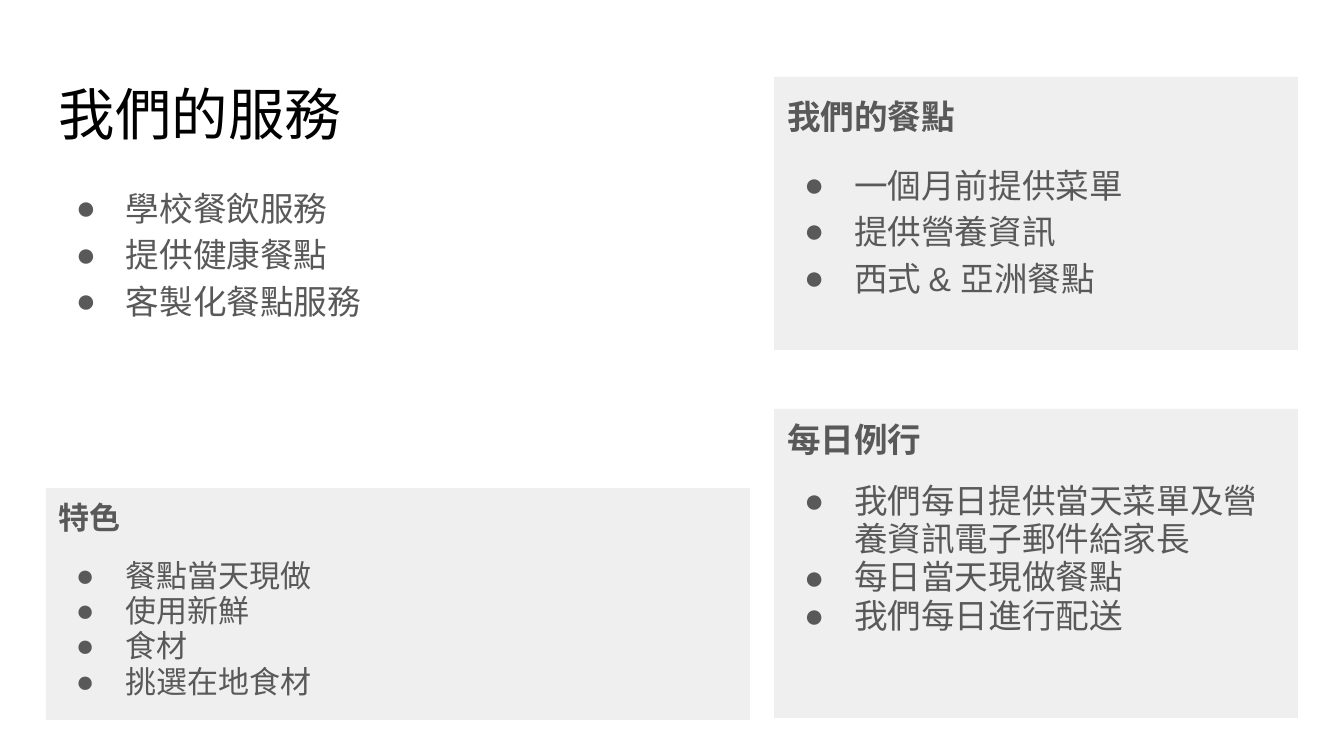
from lxml import etree
from pptx import Presentation
from pptx.dml.color import RGBColor
from pptx.enum.shapes import MSO_SHAPE
from pptx.enum.text import MSO_ANCHOR, PP_ALIGN
from pptx.oxml.ns import qn
from pptx.util import Emu, Pt

RECTANGLE = MSO_SHAPE.RECTANGLE
TOP = MSO_ANCHOR.TOP
LEFT = PP_ALIGN.LEFT
FONT = "Arial"
GREY = "595959"
PANEL = "EFEFEF"


def px(count):
    return Emu(round(count * 914400 / 134.4))


def color(value):
    return RGBColor.from_string(value)


deck = Presentation()
deck.slide_width = px(1344)
deck.slide_height = px(756)
page = deck.slides.add_slide(deck.slide_layouts[6])

blocks = [
    ((46, 66, 1252, 84), None, 30.2, 1.0, "000000", "我們的服務", False, []),
    ((46, 169, 704, 273), None, 18, 1.15, GREY, None, False,
     ["學校餐飲服務", "提供健康餐點", "客製化餐點服務"]),
    ((774, 77, 524, 273), PANEL, 18, 1.15, GREY, "我們的餐點", True,
     ["一個月前提供菜單", "提供營養資訊", "西式 & 亞洲餐點"]),
    ((46, 488, 704, 232), PANEL, 16.6, 0.95, GREY, "特色", True,
     ["餐點當天現做", "使用新鮮", "食材", "挑選在地食材"]),
    ((774, 409, 524, 309), PANEL, 18, 0.95, GREY, "每日例行", True,
     ["我們每日提供當天菜單及營養資訊電子郵件給家長", "每日當天現做餐點", "我們每日進行配送"]),
]

for place, fill, size, spacing, ink, heading, bold, items in blocks:
    bounds = [px(length) for length in place]
    if fill:
        box = page.shapes.add_shape(RECTANGLE, *bounds)
        box.shadow.inherit = False
        box.fill.solid()
        box.fill.fore_color.rgb = color(fill)
        box.line.fill.background()
    else:
        box = page.shapes.add_textbox(*bounds)
    frame = box.text_frame
    frame.word_wrap = True
    frame.vertical_anchor = TOP
    frame.margin_left = frame.margin_right = px(13)
    frame.margin_top = frame.margin_bottom = px(13)

    lines = [(heading, False)] if heading else []
    lines += [(item, True) for item in items]
    for index, (text, bulleted) in enumerate(lines):
        para = frame.add_paragraph() if index else frame.paragraphs[0]
        para.alignment = LEFT
        para.line_spacing = spacing
        para.space_before = Pt(12 if heading and index == 1 else 0)
        if bulleted:
            props = para._p.get_or_add_pPr()
            props.set("marL", str(px(67)))
            props.set("indent", str(-px(50)))
            tint = etree.SubElement(props, qn("a:buClr"))
            etree.SubElement(tint, qn("a:srgbClr"), val=GREY)
            etree.SubElement(props, qn("a:buFont"), typeface=FONT)
            etree.SubElement(props, qn("a:buChar"), char="●")
        span = para.add_run()
        span.text = text
        span.font.name = FONT
        span.font.size = Pt(size)
        span.font.bold = bold and not bulleted
        span.font.color.rgb = color(ink)

deck.save("out.pptx")
